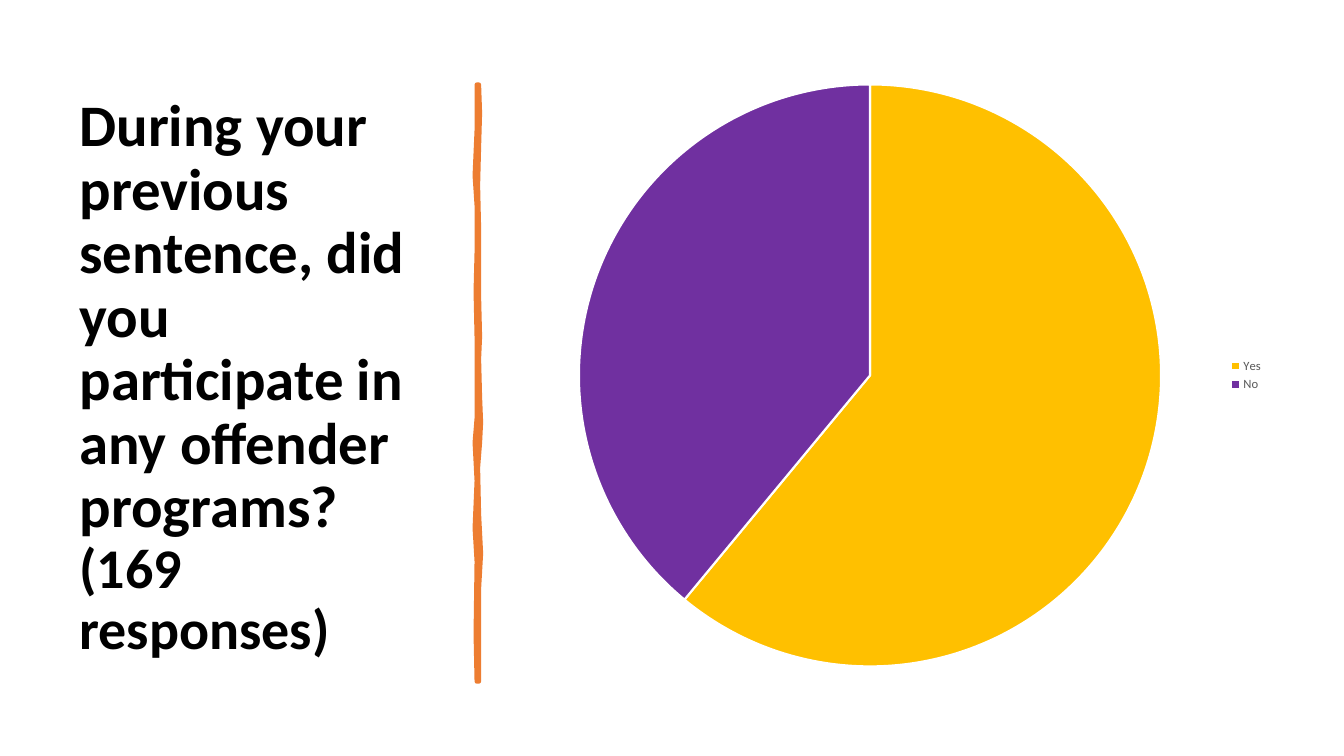
from pptx import Presentation
from pptx.chart.data import CategoryChartData
from pptx.dml.color import RGBColor
from pptx.enum.chart import XL_CHART_TYPE, XL_LEGEND_POSITION
from pptx.enum.text import MSO_ANCHOR
from pptx.util import Pt

PX = 9144  # 100 px to the inch
COLORS = {"text": "000000", "rule": "ED7D31", "yes": "FFC000",
          "no": "7030A0", "legend": "595959", "white": "FFFFFF"}
TITLE = [("During your previous sentence, did you participate in any "
          "offender programs? ", 42), ("(169 responses)", 40)]
SHARES = {"Yes": 61, "No": 39}
# Each edge of the rule: (x, y) within its box
RIGHT = [(4, 0), (5, 28), (4, 62), (3, 100), (4, 142), (4, 210),
         (5, 250), (4, 272), (5, 310), (6, 335), (5, 355), (3, 380),
         (4, 426), (6, 465), (4, 500), (4, 545), (4, 592)]
LEFT = [(2, 592), (1, 545), (2, 473), (0, 440), (2, 393), (0, 355),
        (2, 331), (2, 251), (1, 205), (2, 166), (2, 120), (0, 90),
        (2, 45), (2, 0)]


def color(name):
    return RGBColor.from_string(COLORS[name])


def style(font, name, **values):
    font.color.rgb = color(name)
    for key, value in {"name": "Calibri", **values}.items():
        setattr(font, key, value)


def add_title(slide, box):
    frame = slide.shapes.add_textbox(*[n * PX for n in box]).text_frame
    for key, value in {"word_wrap": True,
                       "vertical_anchor": MSO_ANCHOR.MIDDLE}.items():
        setattr(frame, key, value)
    para = frame.paragraphs[0]
    para.line_spacing = 0.9
    for text, size in TITLE:
        run = para.add_run()
        run.text = text
        style(run.font, "text", size=Pt(size), bold=True)


def add_rule(slide, left, top):
    """Draw the uneven, hand-drawn upright rule."""
    first, *rest = [(left + x, top + y) for x, y in RIGHT + LEFT]
    pen = slide.shapes.build_freeform(*first, scale=PX)
    pen.add_line_segments(rest, close=True)
    rule = pen.convert_to_shape()
    rule.shadow.inherit = False
    for fill in (rule.fill, rule.line.fill):
        fill.solid()
        fill.fore_color.rgb = color("rule")
    rule.line.width = Pt(3.25)


def add_pie(slide, box):
    data = CategoryChartData()
    data.categories = list(SHARES)
    data.add_series("Series 1", list(SHARES.values()))
    chart = slide.shapes.add_chart(
        XL_CHART_TYPE.PIE, *[n * PX for n in box], data).chart
    style(chart.font, "text", size=Pt(10))
    chart.has_title = False
    chart.has_legend = True
    for key, value in {"position": XL_LEGEND_POSITION.RIGHT,
                       "include_in_layout": False}.items():
        setattr(chart.legend, key, value)
    style(chart.legend.font, "legend", size=Pt(9))
    plot = chart.plots[0]
    plot.vary_by_categories = True
    for i, name in enumerate(SHARES):
        part = plot.series[0].points[i].format
        part.fill.solid()
        part.fill.fore_color.rgb = color(name.lower())
        part.line.color.rgb = color("white")
        part.line.width = Pt(1.5)


def main():
    deck = Presentation()
    deck.slide_width, deck.slide_height = 1333 * PX, 750 * PX
    slide = deck.slides.add_slide(deck.slide_layouts[6])
    add_title(slide, (69, 70, 374, 611))
    add_rule(slide, 471, 84)
    add_pie(slide, (508, 70, 755, 605))
    deck.save("out.pptx")


if __name__ == "__main__":
    main()
